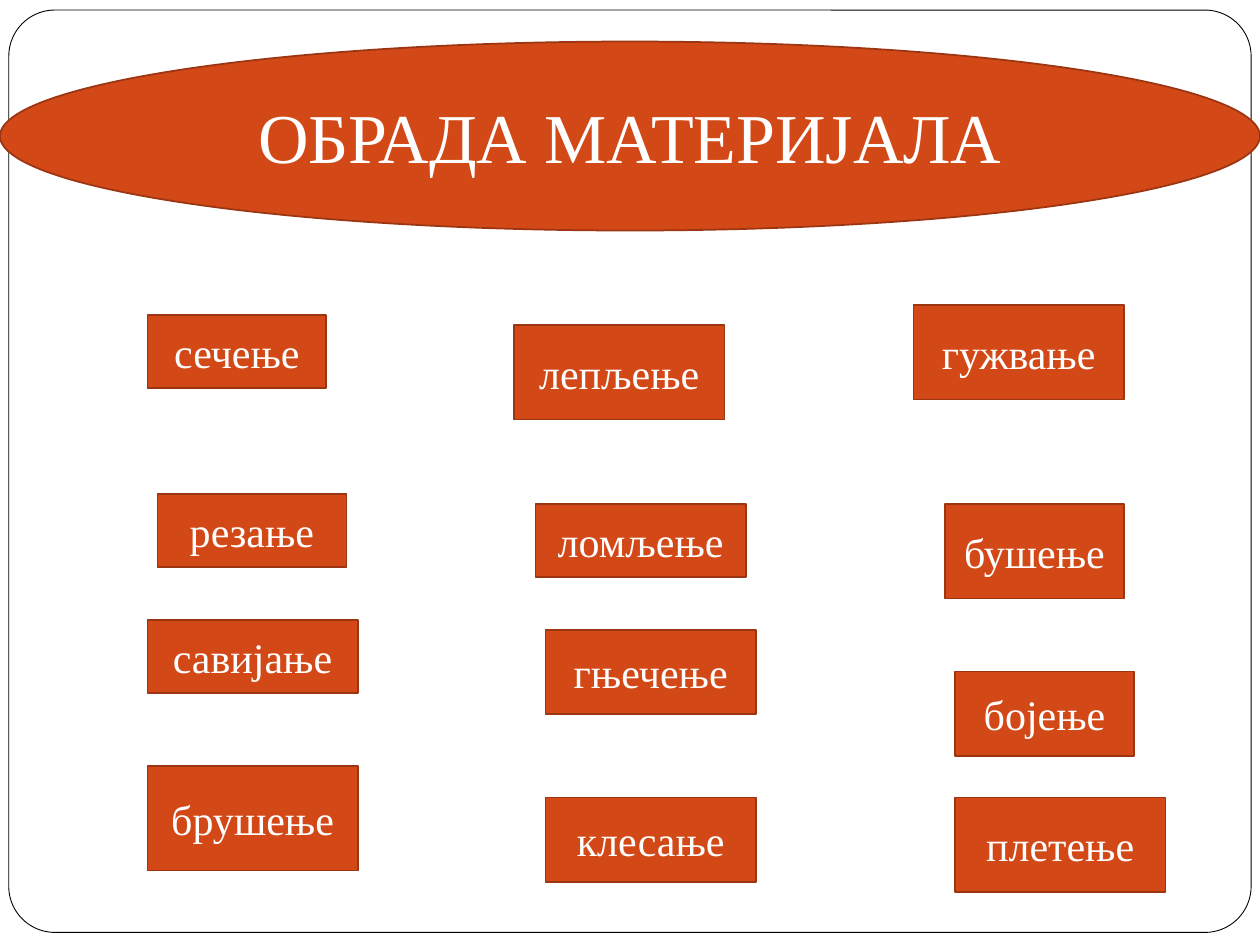
from dataclasses import dataclass

from pptx import Presentation
from pptx.dml.color import RGBColor
from pptx.enum.shapes import MSO_SHAPE as Preset
from pptx.enum.text import MSO_ANCHOR as Anchor, PP_ALIGN as Align
from pptx.shapes.autoshape import Shape
from pptx.slide import Slide
from pptx.util import Inches, Pt


@dataclass(frozen=True)
class Theme:
    font: str = "Times New Roman"
    paper: RGBColor = RGBColor(0xFF, 0xFF, 0xFF)
    frame_line: RGBColor = RGBColor(0x00, 0x00, 0x00)
    accent: RGBColor = RGBColor(0xD3, 0x48, 0x17)
    accent_line: RGBColor = RGBColor(0x9C, 0x35, 0x11)
    title_size: float = 40
    label_size: float = 24
    frame_width: float = 0.5
    box_width: float = 1


@dataclass(frozen=True)
class Area:
    left: float
    top: float
    width: float
    height: float


@dataclass(frozen=True)
class Technique:
    name: str
    area: Area


THEME = Theme()

TECHNIQUES = [
    Technique("сечење", Area(1.17, 2.5, 1.42, 0.58)),
    Technique("резање", Area(1.25, 3.92, 1.5, 0.58)),
    Technique("савијање", Area(1.17, 4.92, 1.67, 0.58)),
    Technique("лепљење", Area(4.08, 2.58, 1.67, 0.75)),
    Technique("ломљење", Area(4.25, 4, 1.67, 0.58)),
    Technique("гњечење", Area(4.33, 5, 1.67, 0.67)),
    Technique("гужвање", Area(7.25, 2.42, 1.67, 0.75)),
    Technique("бушење", Area(7.5, 4, 1.42, 0.75)),
    Technique("бојење", Area(7.58, 5.33, 1.42, 0.67)),
    Technique("брушење", Area(1.17, 6.08, 1.67, 0.83)),
    Technique("клесање", Area(4.33, 6.33, 1.67, 0.67)),
    Technique("плетење", Area(7.58, 6.33, 1.67, 0.75)),
]


def add_panel(slide: Slide, preset: Preset, area: Area, fill: RGBColor,
              line: RGBColor, line_width: float) -> Shape:
    panel = slide.shapes.add_shape(
        preset, Inches(area.left), Inches(area.top),
        Inches(area.width), Inches(area.height))
    panel.shadow.inherit = False
    panel.fill.solid()
    panel.fill.fore_color.rgb = fill
    panel.line.color.rgb = line
    panel.line.width = Pt(line_width)
    return panel


def add_label(slide: Slide, preset: Preset, area: Area, text: str, size: float) -> None:
    box = add_panel(slide, preset, area, THEME.accent, THEME.accent_line, THEME.box_width)
    frame = box.text_frame
    frame.word_wrap = True
    frame.vertical_anchor = Anchor.MIDDLE
    para = frame.paragraphs[0]
    para.alignment = Align.CENTER
    span = para.add_run()
    span.text = text
    span.font.name = THEME.font
    span.font.size = Pt(size)
    span.font.color.rgb = THEME.paper


def main() -> None:
    deck = Presentation()
    deck.slide_width = Inches(10)
    deck.slide_height = Inches(7.5)
    page = deck.slides.add_slide(deck.slide_layouts[6])

    border = add_panel(page, Preset.ROUNDED_RECTANGLE, Area(0.07, 0.08, 9.86, 7.32),
                       THEME.paper, THEME.frame_line, THEME.frame_width)
    border.adjustments[0] = 0.05

    add_label(page, Preset.OVAL, Area(0, 0.33, 10, 1.5),
              "ОБРАДА МАТЕРИЈАЛА", THEME.title_size)
    for technique in TECHNIQUES:
        add_label(page, Preset.RECTANGLE, technique.area, technique.name, THEME.label_size)

    deck.save("out.pptx")


if __name__ == "__main__":
    main()
